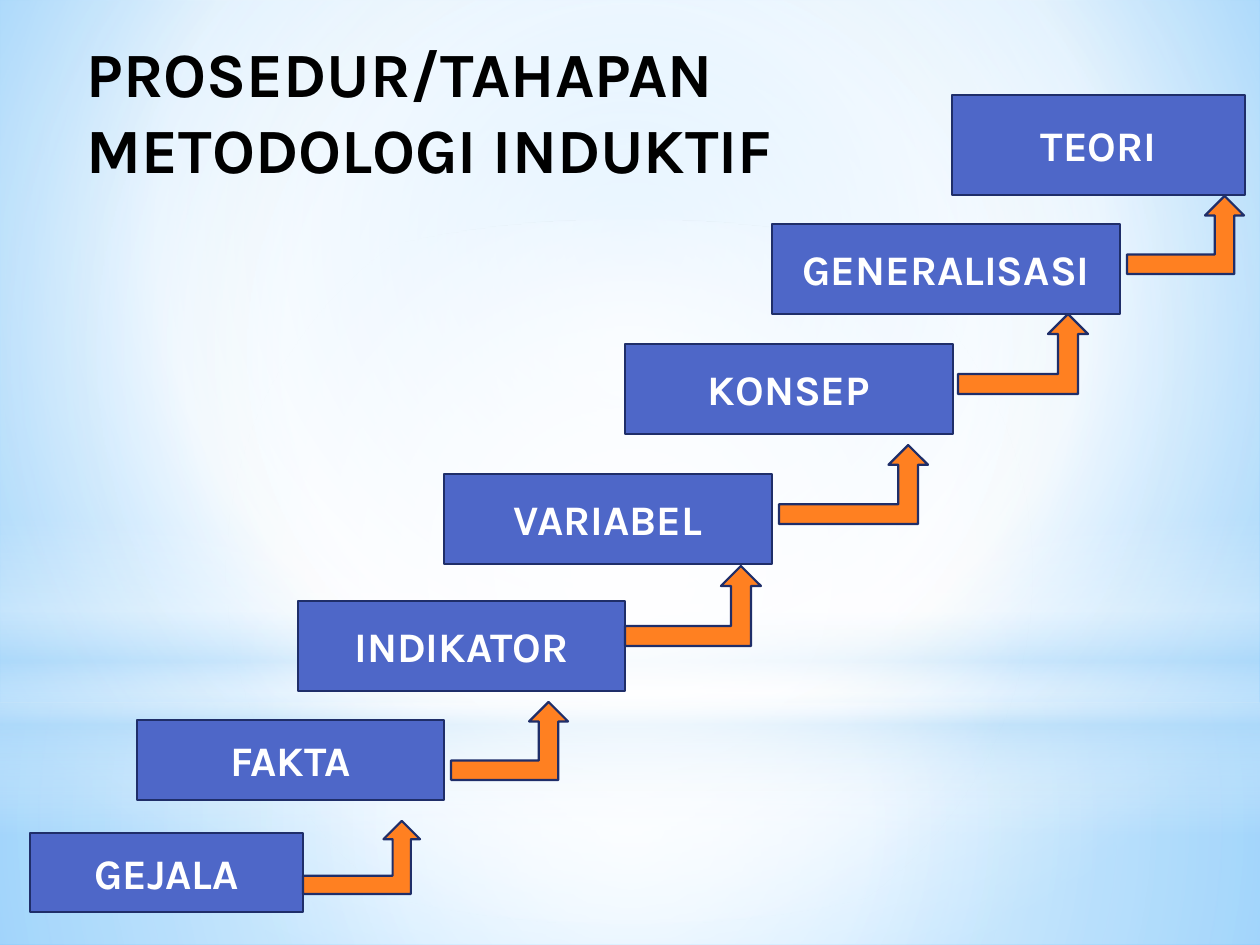
import lxml.etree
import pptx
import pptx.dml.color
import pptx.enum.shapes
import pptx.enum.text
import pptx.oxml.ns
import pptx.util

EMU_PER_PX = 914400 / 126
FONT = "Karla"
COLORS = {
    "box": "4E67C8",
    "arrow": "FF8021",
    "outline": "1F2E69",
    "label": "FFFFFF",
    "title": "000000",
    "white": "FFFFFF",
    "sky": "B4DCFA",
    "backdrop_inner": "9ED5FF",
    "backdrop_outer": "5BB9FF",
}
SHAPES = pptx.enum.shapes.MSO_SHAPE
CENTER = (50, 50, 50, 50)

# Gradient stops: position in percent, colour, opacity in percent
BACKDROP = [(0, "backdrop_inner", 100), (60, "white", 100), (100, "backdrop_outer", 100)]
WASHES = [
    (SHAPES.RECTANGLE, (0, 703, 1260, 242),
     [(0, "white", 91), (37, "white", 76), (100, "sky", 79)], CENTER),
    (SHAPES.RECTANGLE, (0, 0, 1260, 703),
     [(0, "white", 89), (48, "white", 62), (100, "sky", 79)], CENTER),
    (SHAPES.RECTANGLE, (0, 519, 1260, 315),
     [(0, "white", 0), (29, "white", 30), (45, "sky", 40),
      (55, "white", 26), (65, "sky", 60), (100, "white", 0)], None),
    (SHAPES.OVAL, (0, 220, 1260, 703), [(0, "white", 100), (56, "white", 0)], CENTER),
]
STAGES = [
    ("GEJALA", (30, 833, 273, 79)),
    ("FAKTA", (137, 720, 307, 80)),
    ("INDIKATOR", (298, 601, 327, 90)),
    ("VARIABEL", (444, 474, 328, 90)),
    ("KONSEP", (625, 344, 328, 90)),
    ("GENERALISASI", (772, 224, 348, 90)),
    ("TEORI", (952, 95, 293, 100)),
]
ARROWS = [
    (303, 821, 117, 73),
    (451, 702, 117, 78),
    (625, 566, 136, 80),
    (779, 445, 149, 79),
    (958, 314, 130, 80),
    (1127, 196, 117, 78),
]


def px(length):
    return pptx.util.Emu(round(length * EMU_PER_PX))


def color(name):
    return pptx.dml.color.RGBColor.from_string(COLORS[name])


def set_gradient(fill, owner, stops, focus):
    """Fill owner's element with stops, radial around focus or top-down if None."""
    fill.gradient()
    qn = pptx.oxml.ns.qn
    gradient = next(owner.iter(qn("a:gradFill")))
    for child in list(gradient):
        gradient.remove(child)
    add = lxml.etree.SubElement
    stop_list = add(gradient, qn("a:gsLst"))
    for position, name, opacity in stops:
        stop = add(stop_list, qn("a:gs"), pos=str(position * 1000))
        shade = add(stop, qn("a:srgbClr"), val=COLORS[name])
        if opacity < 100:
            add(shade, qn("a:alpha"), val=str(opacity * 1000))
    if focus is None:
        add(gradient, qn("a:lin"), ang="5400000", scaled="0")
    else:
        radial = add(gradient, qn("a:path"), path="circle")
        sides = {side: str(value * 1000) for side, value in zip("ltrb", focus)}
        add(radial, qn("a:fillToRect"), **sides)


def add_plain_shape(page, kind, frame):
    shape = page.shapes.add_shape(kind, *map(px, frame))
    shape.shadow.inherit = False
    return shape


def add_wash(page, kind, frame, stops, focus):
    """Add a borderless, translucent gradient over the background."""
    wash = add_plain_shape(page, kind, frame)
    wash.line.fill.background()
    set_gradient(wash.fill, wash._element.spPr, stops, focus)


def add_outlined_shape(page, kind, frame, fill):
    shape = add_plain_shape(page, kind, frame)
    shape.fill.solid()
    shape.fill.fore_color.rgb = color(fill)
    shape.line.color.rgb = color("outline")
    shape.line.width = pptx.util.Pt(1.25)
    return shape


def write_text(shape, text, size, color_name, alignment):
    frame = shape.text_frame
    frame.text = text
    frame.word_wrap = True
    frame.auto_size = pptx.enum.text.MSO_AUTO_SIZE.NONE
    frame.vertical_anchor = pptx.enum.text.MSO_ANCHOR.MIDDLE
    para = frame.paragraphs[0]
    para.alignment = alignment
    for span in para.runs:
        span.font.name = FONT
        span.font.size = pptx.util.Pt(size)
        span.font.bold = True
        span.font.color.rgb = color(color_name)


def add_stage(page, label, frame):
    box = add_outlined_shape(page, SHAPES.RECTANGLE, frame, "box")
    write_text(box, label, 24, "label", pptx.enum.text.PP_ALIGN.CENTER)


def place_title(page, text):
    """Format the title placeholder and lift it above the washes."""
    title = page.shapes.title
    title.left, title.top, title.width, title.height = map(px, (74, 26, 1070, 169))
    write_text(title, text, 36, "title", pptx.enum.text.PP_ALIGN.LEFT)
    page.shapes._spTree.append(title._element)


def main():
    deck = pptx.Presentation()
    deck.slide_width, deck.slide_height = px(1260), px(945)
    page = deck.slides.add_slide(deck.slide_layouts[5])
    set_gradient(page.background.fill, page._element, BACKDROP, (20, 10, 20, 60))
    for wash in WASHES:
        add_wash(page, *wash)
    place_title(page, "PROSEDUR/TAHAPAN \vMETODOLOGI INDUKTIF")
    for label, frame in STAGES:
        add_stage(page, label, frame)
    for frame in ARROWS:
        add_outlined_shape(page, SHAPES.BENT_UP_ARROW, frame, "arrow")
    deck.save("out.pptx")


if __name__ == "__main__":
    main()
